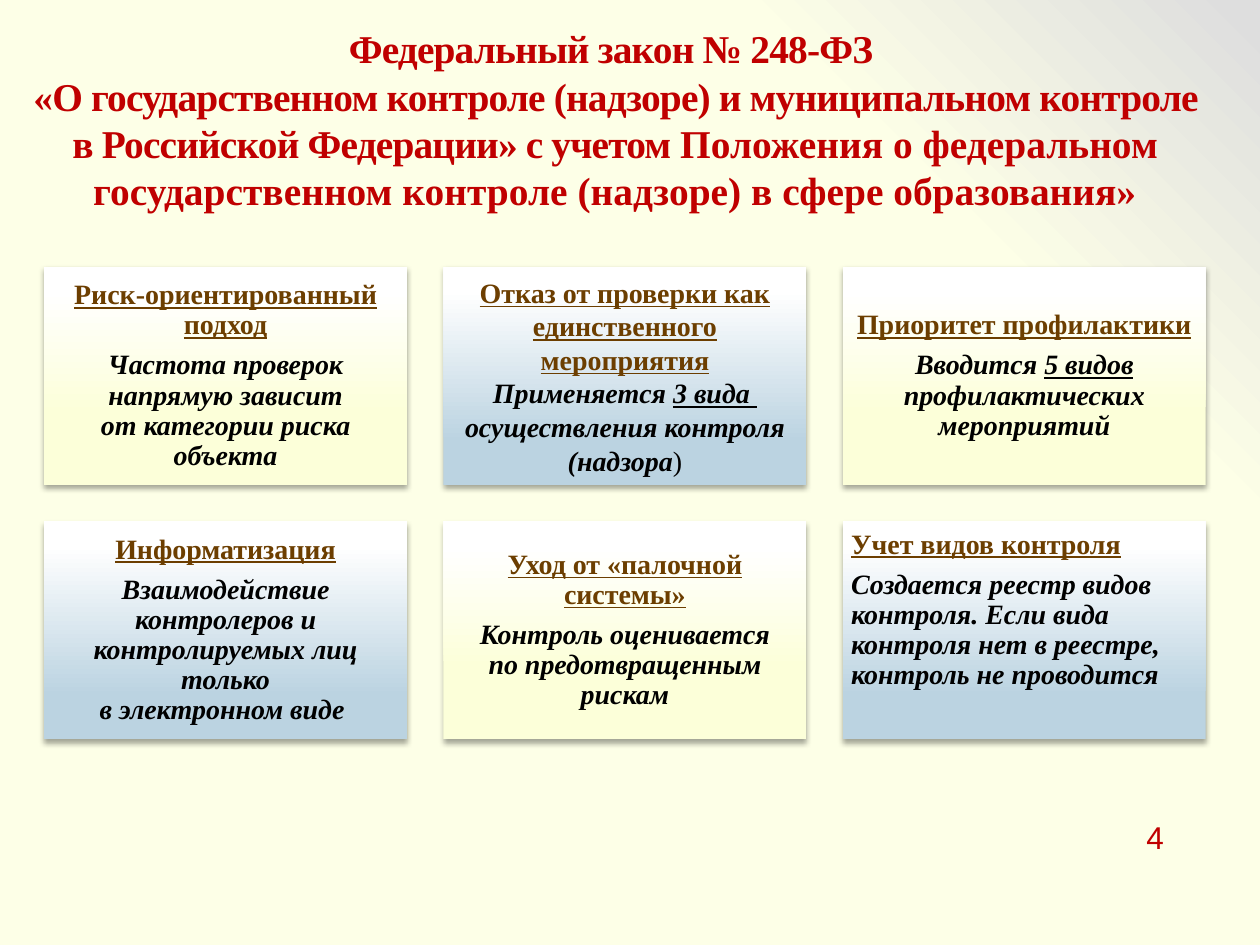
from dataclasses import dataclass
from lxml import etree
from pptx import Presentation
from pptx.dml.color import RGBColor
from pptx.enum.shapes import MSO_SHAPE as Shape
from pptx.enum.text import MSO_ANCHOR as Anchor, PP_ALIGN as Align
from pptx.oxml.ns import qn
from pptx.util import Pt

RED = RGBColor(0xC0, 0x00, 0x00)
BROWN = RGBColor(0x6C, 0x3E, 0x00)
BLACK = RGBColor(0x00, 0x00, 0x00)
WHITE = RGBColor(0xFF, 0xFF, 0xFF)
CREAM = RGBColor(0xFD, 0xFF, 0xE7)
GREY = RGBColor(0xDE, 0xDE, 0xDE)
YELLOW = RGBColor(0xFC, 0xFF, 0xD9)
BLUE = RGBColor(0xBB, 0xD3, 0xE1)

SERIF = {"name": "Times New Roman", "size": Pt(16), "bold": True}
TITLE = SERIF | {"size": Pt(22.5), "color": RED}
HEADING = SERIF | {"color": BROWN, "underline": True}
BODY = SERIF | {"color": BLACK, "italic": True}
MARKED = BODY | {"underline": True}
PLAIN = BODY | {"bold": False, "italic": False}
NUMBER = {"name": "Arial", "size": Pt(18), "color": RED}

CENTERED = {"alignment": Align.CENTER}
TIGHT = {"line_spacing": 0.9, "space_after": Pt(5.6)}
TIGHT_CENTERED = CENTERED | TIGHT

CARD_LEFT, CARD_TOP = 25.2, 152.6
CARD_WIDTH, CARD_HEIGHT = 207.4, 124.6
COLUMN_STEP, ROW_STEP = 228.2, 145.4
COLUMNS = 3

CARDS = [
    (TIGHT_CENTERED, Anchor.MIDDLE, [
        [("Риск-ориентированный\nподход", HEADING)],
        [("Частота проверок напрямую зависит\nот категории риска объекта", BODY)]]),
    (CENTERED, Anchor.MIDDLE, [
        [("Отказ от проверки как единственного мероприятия", HEADING)],
        [("Применяется ", BODY), ("3 вида ", MARKED)],
        [("осуществления контроля (надзора", BODY), (")", PLAIN)]]),
    (TIGHT_CENTERED, Anchor.MIDDLE, [
        [("Приоритет профилактики", HEADING)],
        [("Вводится ", BODY), ("5 видов ", MARKED),
         ("профилактических мероприятий", BODY)]]),
    (TIGHT_CENTERED, Anchor.MIDDLE, [
        [("Информатизация", HEADING)],
        [("Взаимодействие контролеров и контролируемых лиц только\n"
          "в электронном виде ", BODY)]]),
    (TIGHT_CENTERED, Anchor.MIDDLE, [
        [("Уход от «палочной системы»", HEADING)],
        [("Контроль оценивается\nпо предотвращенным рискам", BODY)]]),
    (TIGHT | {"alignment": Align.LEFT}, Anchor.TOP, [
        [("Учет видов контроля", HEADING)],
        [("Создается реестр видов контроля. Если вида контроля нет в реестре, "
          "контроль не проводится", BODY)]]),
]


@dataclass
class Painter:
    page: object
    shadow_alpha: int = 35
    shadow_blur: float = 3.1
    shadow_distance: float = 1.8

    def gradient(self, fill, *stops):
        fill.gradient()
        for stop, (position, color) in zip(fill.gradient_stops, stops):
            stop.position = position
            stop.color.rgb = color

    def background(self):
        fill = self.page.background.fill
        self.gradient(fill, (0.76, CREAM), (0.99, GREY))
        linear = next(self.page.element.iter(qn("a:lin")))
        circle = etree.Element(qn("a:path"), {"path": "circle"})
        etree.SubElement(circle, qn("a:fillToRect"), {"t": "100000", "r": "100000"})
        linear.getparent().replace(linear, circle)

    def shadow(self, box):
        box.shadow.inherit = False
        effects = box.element.spPr.find(qn("a:effectLst"))
        outer = etree.SubElement(effects, qn("a:outerShdw"), {
            "blurRad": str(int(Pt(self.shadow_blur))),
            "dist": str(int(Pt(self.shadow_distance))),
            "dir": "5400000", "rotWithShape": "0"})
        color = etree.SubElement(outer, qn("a:srgbClr"), {"val": str(BLACK)})
        etree.SubElement(color, qn("a:alpha"), {"val": str(self.shadow_alpha * 1000)})

    def paragraphs(self, box, contents, layout, anchor, insets):
        frame = box.text_frame
        frame.word_wrap = True
        frame.vertical_anchor = anchor
        for side, inset in zip(("left", "top", "right", "bottom"), insets):
            setattr(frame, f"margin_{side}", Pt(inset))
        for index, spans in enumerate(contents):
            para = frame.add_paragraph() if index else frame.paragraphs[0]
            for key, value in layout.items():
                setattr(para, key, value)
            for text, style in spans:
                self.spans(para, text, style)

    def spans(self, para, text, style):
        for index, line in enumerate(text.split("\n")):
            if index:
                para.add_line_break()
            span = para.add_run()
            span.text = line
            for key, value in style.items():
                if key == "color":
                    span.font.color.rgb = value
                elif key == "spacing":
                    span.font._element.set("spc", str(int(value * 100)))
                else:
                    setattr(span.font, key, value)

    def text(self, bounds, contents, layout, anchor, insets):
        box = self.page.shapes.add_textbox(*map(Pt, bounds))
        self.paragraphs(box, contents, layout, anchor, insets)

    def card(self, bounds, stops, contents, layout, anchor):
        box = self.page.shapes.add_shape(Shape.RECTANGLE, *map(Pt, bounds))
        self.gradient(box.fill, *stops)
        box.fill.gradient_angle = 90
        box.line.fill.background()
        self.shadow(box)
        self.paragraphs(box, contents, layout, anchor, [4.8] * 4)


def main():
    deck = Presentation()
    deck.slide_width, deck.slide_height = Pt(720), Pt(540)
    painter = Painter(deck.slides.add_slide(deck.slide_layouts[6]))
    painter.background()

    condensed = TITLE | {"spacing": -0.5}
    painter.text((8.6, 20.9, 686.2, 94.3), [
        [("Федеральный закон № 248-ФЗ ", condensed)],
        [("«О государственном контроле (надзоре) и муниципальном контроле в "
          "Российской Федерации» с учетом ", condensed),
         ("Положения о федеральном государственном контроле (надзоре) "
          "в сфере образования»", TITLE)],
    ], CENTERED, Anchor.MIDDLE, [2.4] * 4)

    yellow_stops = (0.33, YELLOW), (0.89, WHITE)
    blue_stops = (0.2, BLUE), (0.89, WHITE)
    for index, (layout, anchor, contents) in enumerate(CARDS):
        row, column = divmod(index, COLUMNS)
        bounds = (CARD_LEFT + column * COLUMN_STEP, CARD_TOP + row * ROW_STEP,
                  CARD_WIDTH, CARD_HEIGHT)
        stops = blue_stops if index % 2 else yellow_stops
        painter.card(bounds, stops, contents, layout, anchor)

    painter.text((648, 463.7, 103.7, 28.8), [[("4", NUMBER)]],
                 {}, Anchor.TOP, (7.2, 3.6, 7.2, 3.6))
    deck.save("out.pptx")


if __name__ == "__main__":
    main()
